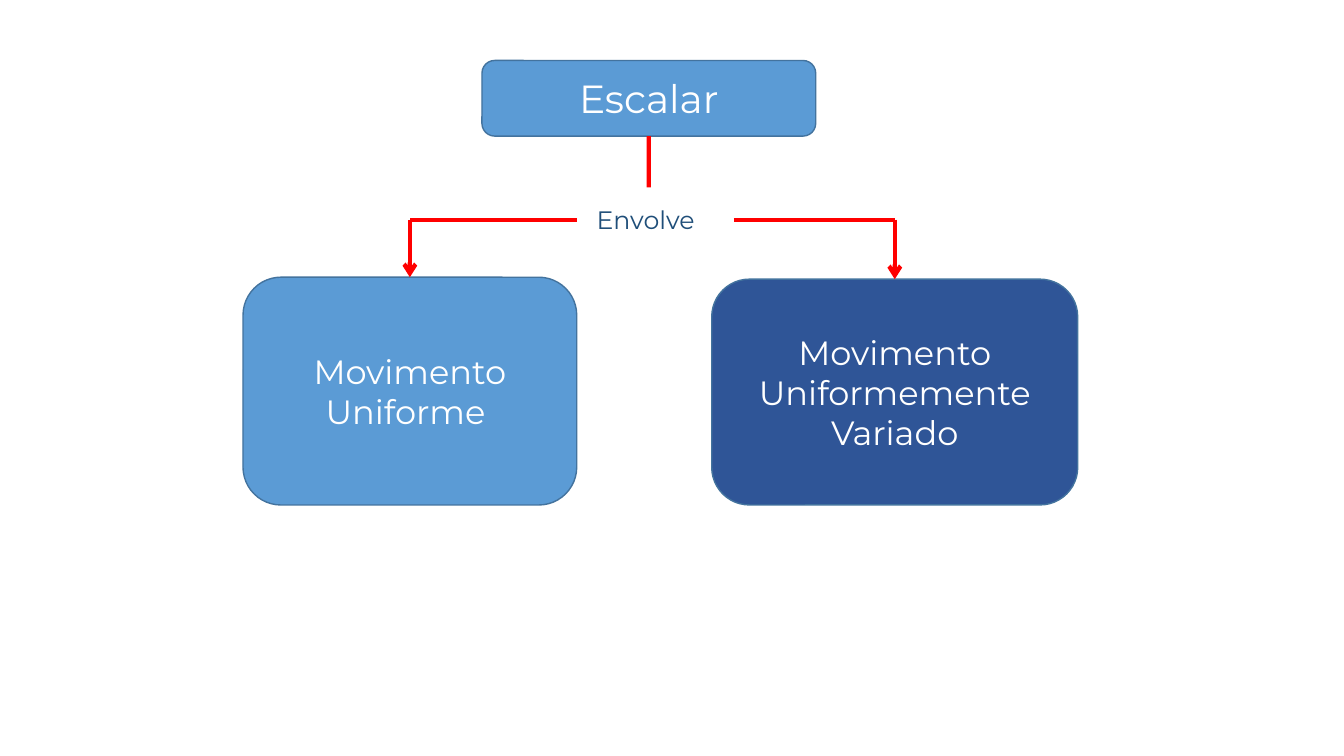
from lxml.etree import SubElement
from pptx import Presentation
from pptx.dml.color import RGBColor
from pptx.enum.shapes import MSO_CONNECTOR, MSO_SHAPE
from pptx.enum.text import MSO_ANCHOR, PP_ALIGN
from pptx.oxml.ns import qn
from pptx.util import Inches, Pt

WHITE = RGBColor(0xFF, 0xFF, 0xFF)
SKY = RGBColor(0x5B, 0x9B, 0xD5)
NAVY = RGBColor(0x2F, 0x55, 0x97)
OUTLINE = RGBColor(0x43, 0x73, 0x9E)
INK = RGBColor(0x1F, 0x4E, 0x79)
RED = RGBColor(0xFF, 0x00, 0x00)
TOP, BOTTOM = 0, 2


class ConceptMap:
    """Draws on one slide; all lengths are percentages of the slide's size."""

    font_name = "Montserrat"

    def __init__(self, deck):
        self.deck = deck
        self.page = deck.slides.add_slide(deck.slide_layouts[6])

    def across(self, share):
        return round(self.deck.slide_width * share / 100)

    def down(self, share):
        return round(self.deck.slide_height * share / 100)

    def area(self, left, top, width, height):
        return self.across(left), self.down(top), self.across(width), self.down(height)

    def set_text(self, shape, text, size, color):
        frame = shape.text_frame
        frame.word_wrap = True
        frame.vertical_anchor = MSO_ANCHOR.MIDDLE
        para = frame.paragraphs[0]
        para.alignment = PP_ALIGN.CENTER
        span = para.add_run()
        span.text = text
        for name, value in {"name": self.font_name, "size": Pt(size)}.items():
            setattr(span.font, name, value)
        span.font.color.rgb = color

    def node(self, text, area, fill, size=24):
        box = self.page.shapes.add_shape(MSO_SHAPE.ROUNDED_RECTANGLE, *self.area(*area))
        box.shadow.inherit = False
        box.fill.solid()
        box.fill.fore_color.rgb = fill
        box.line.color.rgb = OUTLINE
        box.line.width = Pt(1)
        self.set_text(box, text, size, WHITE)
        return box

    def label(self, text, area):
        self.set_text(self.page.shapes.add_textbox(*self.area(*area)), text, 18, INK)

    def line(self, start, end):
        link = self.page.shapes.add_connector(
            MSO_CONNECTOR.STRAIGHT,
            self.across(start[0]), self.down(start[1]),
            self.across(end[0]), self.down(end[1]))
        link.line.color.rgb = RED
        link.line.width = Pt(3)
        SubElement(link._element.spPr, qn("a:effectLst"))
        return link

    def branch(self, label_side, center, level, box):
        """Run sideways from the label, then down with an arrow to the box."""
        self.line((label_side, level), (center, level))
        arrow = self.line((center, level), (center, level + 7.5))
        arrow.end_connect(box, TOP)
        SubElement(arrow._element.spPr.find(qn("a:ln")), qn("a:tailEnd"), type="arrow")


def main():
    deck = Presentation()
    deck.slide_width, deck.slide_height = Inches(13.33), Inches(7.5)
    concept_map = ConceptMap(deck)

    root = concept_map.node("Escalar", (35.86, 8, 24.83, 10), SKY, size=28)
    stem = concept_map.line((48.27, 18), (48.27, 24.8))
    stem.begin_connect(root, BOTTOM)
    concept_map.label("Envolve ", (40.89, 24.8, 14.78, 8.4))

    kinds = [
        ("Movimento Uniforme ", (18.08, 36.67, 24.83, 30.13), SKY, 42.91),
        ("Movimento Uniformemente Variado", (52.96, 36.93, 27.23, 29.87), NAVY, 54.61),
    ]
    for text, area, fill, label_side in kinds:
        box = concept_map.node(text, area, fill)
        concept_map.branch(label_side, area[0] + area[2] / 2, 29.07, box)

    deck.save("out.pptx")


if __name__ == "__main__":
    main()
